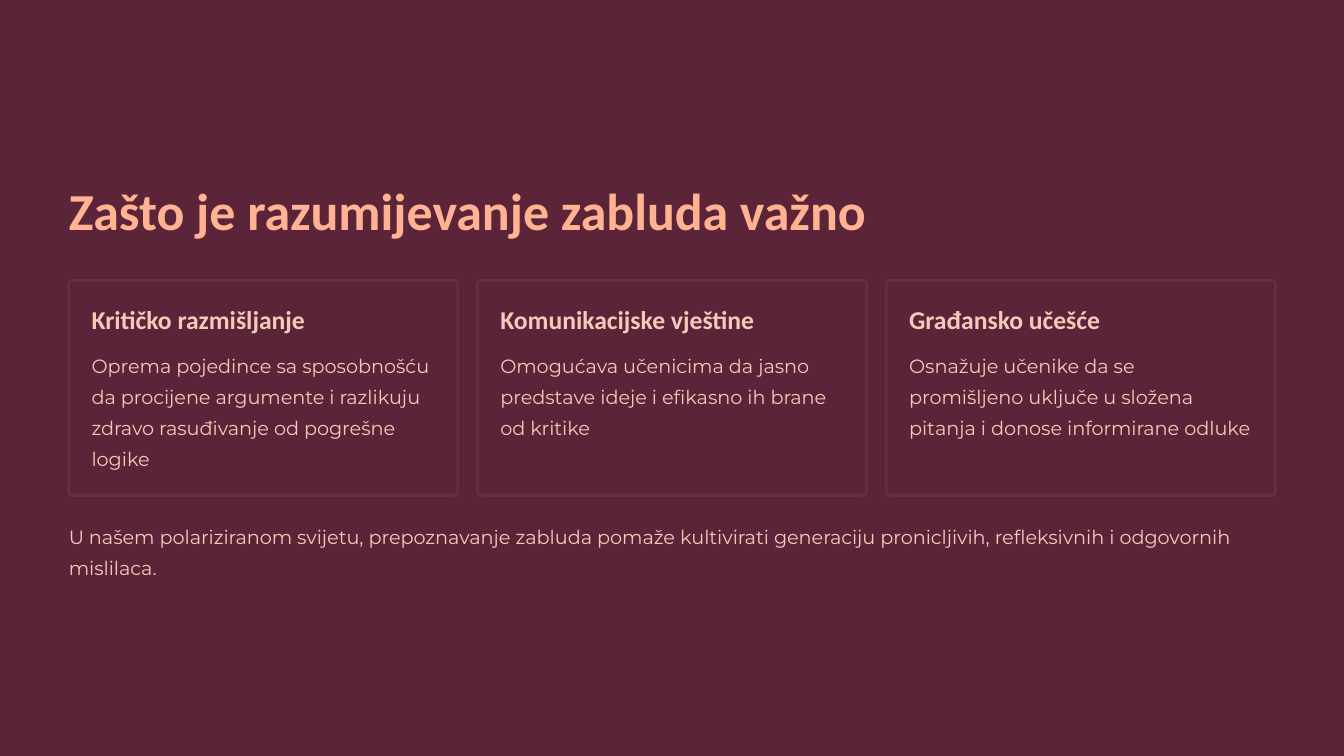
"""Build a slide on why understanding fallacies matters, with three benefit cards."""
from dataclasses import dataclass

import pptx
import pptx.dml.color
import pptx.enum.shapes
import pptx.util
from pptx.util import Cm


@dataclass(frozen=True)
class TextStyle:
    font: str
    size: float
    leading: float
    color: str
    bold: bool


class Theme:
    background = "5C2438"
    card_border = "662E42"
    border_width = 2.4
    title = TextStyle("Calibri", 44.5, 56, "FFB393", True)
    heading = TextStyle("Calibri", 22, 28, "F4CAB8", True)
    body = TextStyle("Montserrat", 16.5, 26.5, "F4CAB8", False)


def rgb(value):
    return pptx.dml.color.RGBColor.from_string(value)


def add_text(slide, text, style, left, top, width, height, wrap=True):
    frame = slide.shapes.add_textbox(left, top, width, height).text_frame
    frame.margin_left = frame.margin_right = frame.margin_top = frame.margin_bottom = 0
    frame.word_wrap = wrap
    paragraph = frame.paragraphs[0]
    paragraph.text = text
    paragraph.line_spacing = pptx.util.Pt(style.leading)
    paragraph.font.name = style.font
    paragraph.font.size = pptx.util.Pt(style.size)
    paragraph.font.bold = style.bold
    paragraph.font.color.rgb = rgb(style.color)


presentation = pptx.Presentation()
presentation.slide_width = Cm(40.64)
presentation.slide_height = Cm(22.86)
slide = presentation.slides.add_slide(presentation.slide_layouts[6])
slide.background.fill.solid()
slide.background.fill.fore_color.rgb = rgb(Theme.background)

margin = Cm(2.08)
content_width = presentation.slide_width - 2 * margin
card_gap = Cm(0.6)
card_top = Cm(8.48)
card_height = Cm(6.5)
card_padding = Cm(0.69)

benefits = [
    ("Kritičko razmišljanje",
     "Oprema pojedince sa sposobnošću da procijene argumente i razlikuju "
     "zdravo rasuđivanje od pogrešne logike"),
    ("Komunikacijske vještine",
     "Omogućava učenicima da jasno predstave ideje i efikasno ih brane od kritike"),
    ("Građansko učešće",
     "Osnažuje učenike da se promišljeno uključe u složena pitanja i donose "
     "informirane odluke"),
]
card_width = (content_width - card_gap * (len(benefits) - 1)) // len(benefits)
card_text_width = card_width - 2 * card_padding

add_text(slide, "Zašto je razumijevanje zabluda važno", Theme.title,
         margin, Cm(5.31), Cm(28.63), Cm(1.98), wrap=False)

for index, (heading, explanation) in enumerate(benefits):
    card_left = margin + index * (card_width + card_gap)
    card = slide.shapes.add_shape(pptx.enum.shapes.MSO_SHAPE.ROUNDED_RECTANGLE,
                                  card_left, card_top, card_width, card_height)
    card.adjustments[0] = 0.014
    card.shadow.inherit = False
    card.fill.solid()
    card.fill.fore_color.rgb = rgb(Theme.background)
    card.line.color.rgb = rgb(Theme.card_border)
    card.line.width = pptx.util.Pt(Theme.border_width)
    text_left = card_left + card_padding
    add_text(slide, heading, Theme.heading, text_left, Cm(9.14),
             card_text_width, Cm(0.99), wrap=False)
    add_text(slide, explanation, Theme.body, text_left, Cm(10.49),
             card_text_width, Cm(3.81))

add_text(slide,
         "U našem polariziranom svijetu, prepoznavanje zabluda pomaže kultivirati "
         "generaciju pronicljivih, refleksivnih i odgovornih mislilaca.",
         Theme.body, margin, Cm(15.65), content_width, Cm(1.9))

presentation.save("out.pptx")
